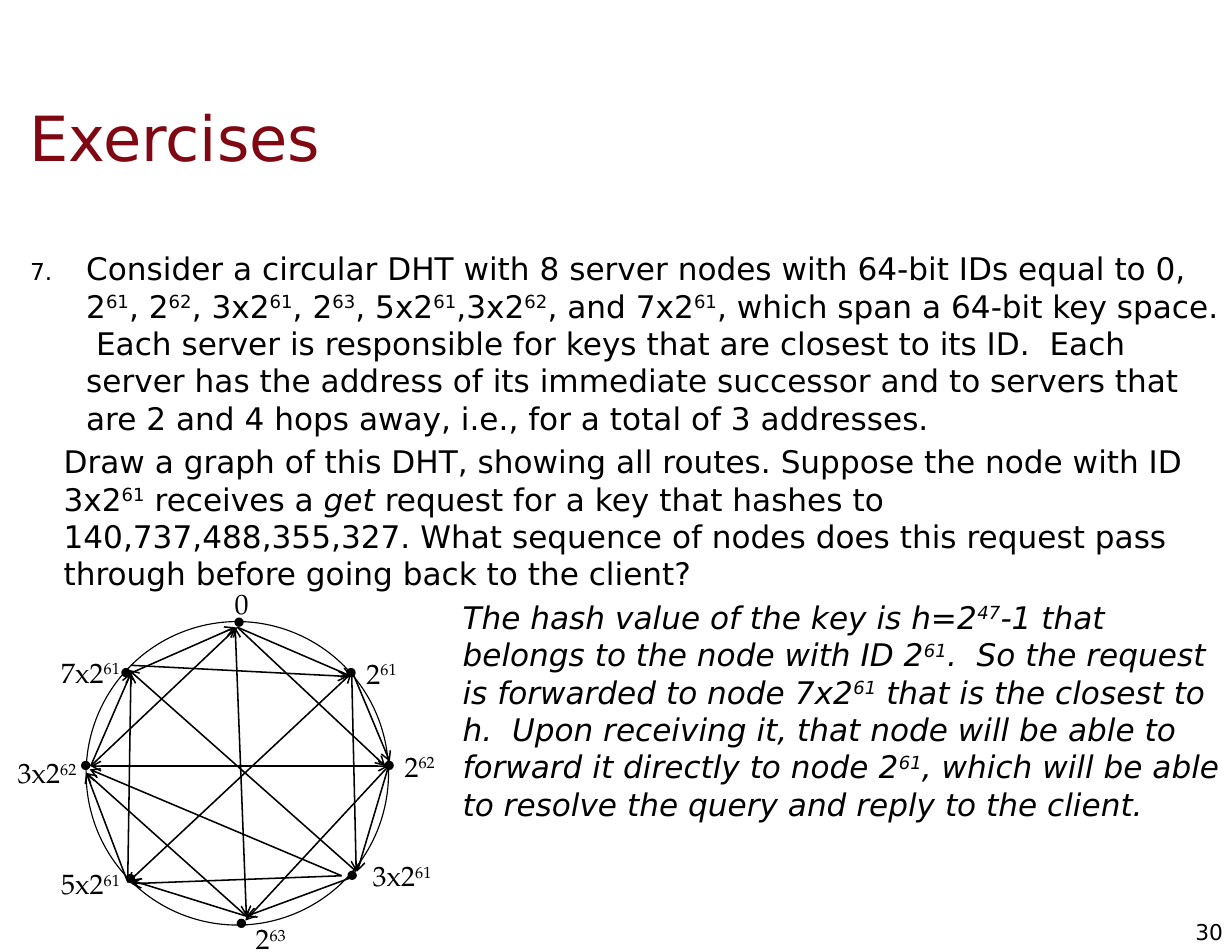
from dataclasses import dataclass
from lxml.etree import SubElement
from pptx import Presentation
from pptx.dml.color import RGBColor as RGB
from pptx.enum.shapes import MSO_CONNECTOR as LINE, MSO_SHAPE as SHAPE
from pptx.enum.text import MSO_ANCHOR as ANCHOR, PP_ALIGN as ALIGN
from pptx.oxml.ns import qn
from pptx.util import Pt


@dataclass
class Theme:
    ink = RGB(0, 0, 0)
    red = RGB(0x7F, 0x08, 0x13)
    sans = "DejaVu Sans"
    serif = "TeX Gyre Pagella"
    title = Pt(40)
    body = Pt(20)
    label = Pt(18)
    number = Pt(14)


def write(para, text, font, size, color=Theme.ink, slant=False):
    """Pieces between carets are exponents if digits, otherwise italic."""
    for i, piece in enumerate(text.split("^")):
        run = para.add_run()
        run.text = piece
        run.font.name, run.font.size = font, size
        run.font.color.rgb = color
        marked = i % 2 == 1
        run.font.italic = slant or (marked and not piece.isdigit())
        if marked and piece.isdigit():
            run._r.get_or_add_rPr().set("baseline", "30000")


def add_box(x, y, w, h, pad=(7.2, 3.6)):
    frame = slide.shapes.add_textbox(Pt(x), Pt(y), Pt(w), Pt(h)).text_frame
    frame.word_wrap = True
    frame.margin_left = frame.margin_right = Pt(pad[0])
    frame.margin_top = frame.margin_bottom = Pt(pad[1])
    return frame


deck = Presentation()
deck.slide_width, deck.slide_height = Pt(792), Pt(612)
slide = deck.slides.add_slide(deck.slide_layouts[5])

# Title
title = slide.shapes.title
title.left, title.top, title.width, title.height = Pt(10.8), Pt(50.4), Pt(758), Pt(75)
frame = title.text_frame
frame.vertical_anchor = ANCHOR.MIDDLE
frame.margin_left = frame.margin_right = Pt(8)
frame.margin_top = frame.margin_bottom = Pt(4.3)
head = frame.paragraphs[0]
head.alignment = ALIGN.LEFT
write(head, "Exercises", Theme.sans, Theme.title, Theme.red)

# Question and answer: left indent, first line, slant, text
body = [
    (46, -36, False,
     "Consider a circular DHT with 8 server nodes with 64-bit IDs equal to 0, "
     "2^61^, 2^62^, 3x2^61^, 2^63^, 5x2^61^,3x2^62^, and 7x2^61^, which span a "
     "64-bit key space.  Each server is responsible for keys that are closest to "
     "its ID.  Each server has the address of its immediate successor and to "
     "servers that are 2 and 4 hops away, i.e., for a total of 3 addresses."),
    (31.5, 0, False,
     "Draw a graph of this DHT, showing all routes. Suppose the node with ID "
     "3x2^61^ receives a ^get^ request for a key that hashes to "
     "140,737,488,355,327. What sequence of nodes does this request pass through "
     "before going back to the client?"),
    (288, 0, True,
     "The hash value of the key is h=2^47^-1 that belongs to the node with ID "
     "2^61^.  So the request is forwarded to node 7x2^61^ that is the closest to "
     "h.  Upon receiving it, that node will be able to forward it directly to "
     "node 2^61^, which will be able to resolve the query and reply to the client."),
]
frame = add_box(1.4, 156.2, 790.6, 455.8, (8, 4.3))
for i, (left, first, slant, text) in enumerate(body):
    para = frame.paragraphs[0] if i == 0 else frame.add_paragraph()
    props = para._p.get_or_add_pPr()
    props.set("marL", str(Pt(left)))
    props.set("indent", str(Pt(first)))
    if i == 0:
        tint = SubElement(props, qn("a:buClr"))
        SubElement(tint, qn("a:srgbClr"), val=str(Theme.ink))
        SubElement(props, qn("a:buSzPct"), val="75000")
        SubElement(props, qn("a:buFont"), typeface=Theme.sans)
        SubElement(props, qn("a:buAutoNum"), type="arabicPeriod", startAt="7")
    else:
        para.space_before = Pt(4)
    write(para, text, Theme.sans, Theme.body, slant=slant)

# Slide number
frame = add_box(761.8, 590.4, 24.5, 17.3, (0, 0))
frame.vertical_anchor = ANCHOR.MIDDLE
frame.paragraphs[0].alignment = ALIGN.RIGHT
write(frame.paragraphs[0], "30", Theme.sans, Theme.number)

# Ring
ring = slide.shapes.add_shape(SHAPE.OVAL, Pt(55.4), Pt(399.6), Pt(194.4), Pt(195.1))
ring.shadow.inherit = False
ring.fill.background()
ring.line.color.rgb, ring.line.width = Theme.ink, Pt(0.75)

# Nodes: dot centre, label, label right edge and top
nodes = [
    (153.7, 400, "0", 167, 373.7),
    (225.7, 432.4, "2^61^", 262.1, 418.3),
    (250.2, 492.1, "2^62^", 286.6, 478.1),
    (226.4, 562.7, "3x2^61^", 284.4, 548.6),
    (155.2, 593.6, "2^63^", 190.8, 589),
    (83.9, 564.8, "5x2^61^", 84.2, 553.7),
    (55.1, 492.1, "3x2^62^", 56.2, 482.4),
    (81, 432.4, "7x2^61^", 84.2, 417.6),
]
size, wide = 5, 64.8
for x, y, text, right, top in nodes:
    dot = slide.shapes.add_shape(SHAPE.OVAL, Pt(x - size / 2), Pt(y - size / 2), Pt(size), Pt(size))
    dot.shadow.inherit = False
    dot.fill.solid()
    dot.fill.fore_color.rgb = dot.line.color.rgb = Theme.ink
    dot.line.width = Pt(1)
    para = add_box(right - wide, top, wide, 28.8).paragraphs[0]
    para.alignment = ALIGN.RIGHT
    write(para, text, Theme.serif, Theme.label)

# Routes: start, end, arrowheads
one, both, back = ["tailEnd"], ["headEnd", "tailEnd"], ["headEnd"]
n0, n1, n2 = (152.6, 403.2), (226.1, 432.7), (249.8, 492.5)
n3, n4, n5 = (219.6, 563), (158.4, 589), (82.1, 567.4)
n6, n7 = (58.3, 492.5), (84.2, 432.7)
in3, in6 = (229, 560.2), (55.4, 496.8)
routes = [
    (n0, (226.1, 434.9), one),
    (n0, (247.7, 492.5), one),
    ((151.2, 403.2), n4, both),
    ((226.8, 432.7), (250.6, 489.6), one),
    (n1, in3, one),
    (n1, n5, both),
    (n2, (229.7, 560.2), one),
    (n2, (157.7, 591.8), one),
    (n2, n6, both),
    ((229, 563), n4, one),
    (n3, (84.2, 568.1), one),
    (n3, (57.6, 494.6), one),
    (n4, (84.2, 565.9), one),
    (n4, in6, one),
    ((81.4, 565.2), in6, one),
    (n5, n7, one),
    (n6, n7, one),
    (n6, n0, one),
    (n7, (151.2, 403.2), one),
    ((84.2, 427.7), (223.9, 434.9), one),
    ((82.8, 430.6), in3, back),
]
for start, end, tips in routes:
    route = slide.shapes.add_connector(LINE.STRAIGHT, *map(Pt, start + end))
    route.line.color.rgb, route.line.width = Theme.ink, Pt(1)
    for tip in tips:
        SubElement(route.line._get_or_add_ln(), qn(f"a:{tip}"), type="arrow")
    SubElement(route._element.spPr, qn("a:effectLst"))

deck.save("out.pptx")
